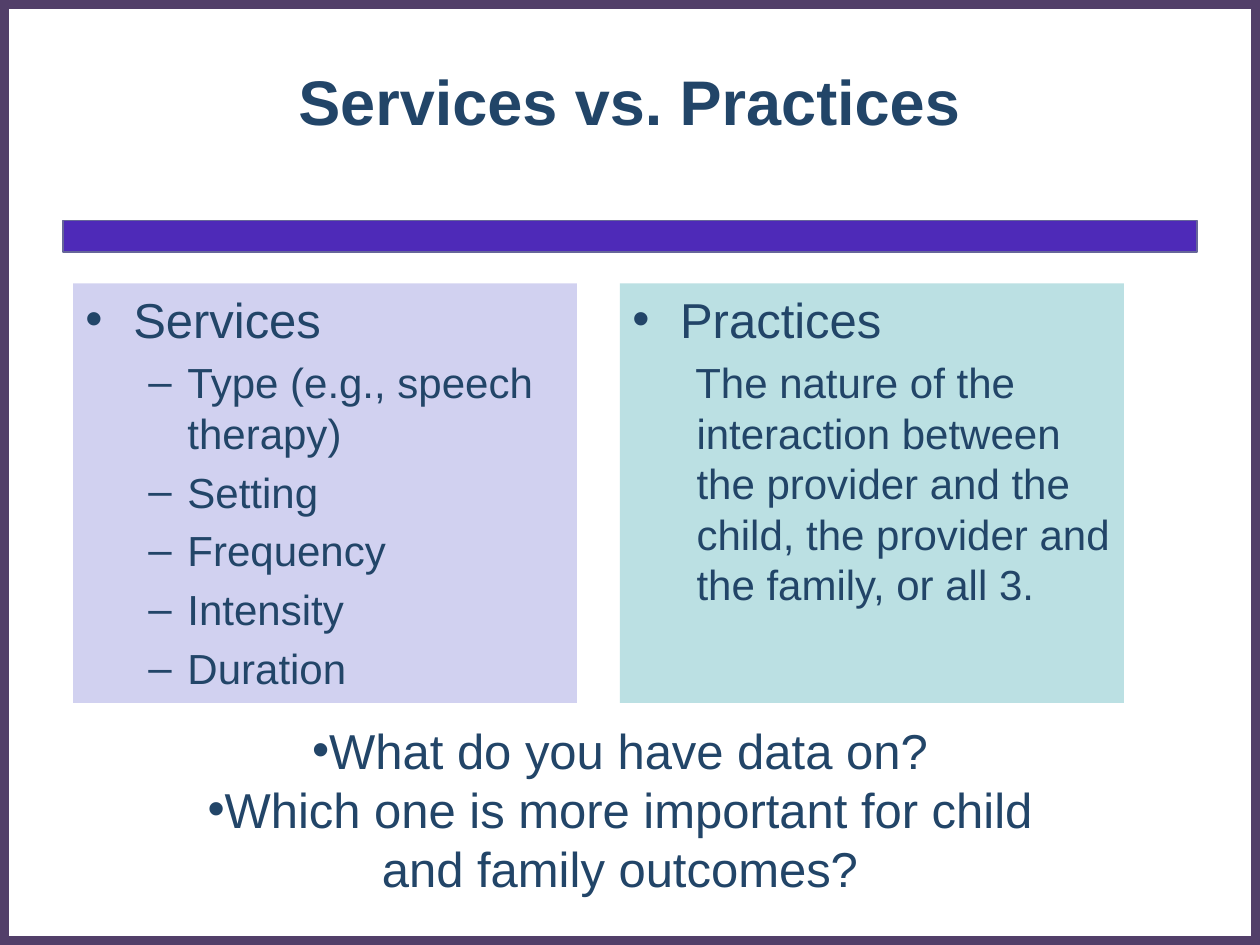
"""Build the Services vs. Practices comparison slide."""
from lxml import etree
from pptx import Presentation
from pptx.dml.color import RGBColor
from pptx.enum.shapes import MSO_SHAPE as Shape
from pptx.enum.text import MSO_ANCHOR as Anchor, PP_ALIGN as Align
from pptx.oxml.ns import qn
from pptx.util import Inches, Pt

COLORS = {
    "frame": "523F69",
    "bar": "4E2AB8",
    "bar_line": "666699",
    "text": "224568",
    "services": "D1D1F0",
    "practices": "BBE0E3",
}


def add_panel(page, area, fill=None, line=None, width=0):
    panel = page.shapes.add_shape(Shape.RECTANGLE, *[Inches(n) for n in area])
    panel.shadow.inherit = False
    if fill:
        panel.fill.solid()
        panel.fill.fore_color.rgb = RGBColor.from_string(COLORS[fill])
    else:
        panel.fill.background()
    if line:
        panel.line.color.rgb = RGBColor.from_string(COLORS[line])
        panel.line.width = Pt(width)
    else:
        panel.line.fill.background()
    return panel


def write_paragraphs(box, rows, align=Align.LEFT, anchor=Anchor.TOP, bold=False, gap=0):
    frame = box.text_frame
    frame.word_wrap = True
    frame.vertical_anchor = anchor
    frame.text = "\n".join(row[0] for row in rows)
    for index, (para, row) in enumerate(zip(frame.paragraphs, rows)):
        words, size, level, bullet, margin, indent = row
        para.alignment = align
        para.level = level
        para.space_before = Pt(size * gap if index else 0)
        properties = para._p.get_or_add_pPr()
        properties.set("marL", str(Inches(margin)))
        properties.set("indent", str(Inches(indent)))
        if bullet:
            font = etree.SubElement(properties, qn("a:buFont"))
            font.set("typeface", "Arial")
            etree.SubElement(properties, qn("a:buChar")).set("char", bullet)
        else:
            etree.SubElement(properties, qn("a:buNone"))
        for span in para.runs:
            span.font.name = "Arial"
            span.font.size = Pt(size)
            span.font.bold = bold
            span.font.color.rgb = RGBColor.from_string(COLORS["text"])


deck = Presentation()
deck.slide_width, deck.slide_height = Inches(10), Inches(7.5)
page = deck.slides.add_slide(deck.slide_layouts[6])

add_panel(page, (0, 0, 10, 7.5), line="frame", width=10)
add_panel(page, (0.5, 1.75, 9, 0.25), "bar", "bar_line", 0.75)

title = page.shapes.add_textbox(Inches(0.58), Inches(0.17), Inches(8.83), Inches(1.25))
write_paragraphs(title, [("Services vs. Practices", 36, 0, None, 0, 0)],
                 Align.CENTER, Anchor.MIDDLE, bold=True)

aspects = ["Type (e.g., speech therapy)", "Setting", "Frequency", "Intensity", "Duration"]
nature = ("The nature of the interaction between the provider and the child, "
          "the provider and the family, or all 3.")
columns = [
    ("Services", "services", 0.58, [(words, 24, 1, "–", 0.81, -0.31) for words in aspects]),
    ("Practices", "practices", 4.92, [(nature, 24, 1, None, 0.51, -0.01)]),
]
for heading, fill, left, details in columns:
    column = add_panel(page, (left, 2.25, 4, 3.33), fill)
    write_paragraphs(column, [(heading, 28, 0, "•", 0.38, -0.38)] + details, gap=0.2)

questions = ["What do you have data on?",
             "Which one is more important for child and family outcomes?"]
prompt = page.shapes.add_textbox(Inches(1.42), Inches(5.67), Inches(7), Inches(1.51))
write_paragraphs(prompt, [(words, 28, 0, "•", 0, 0) for words in questions], Align.CENTER)

deck.save("out.pptx")
